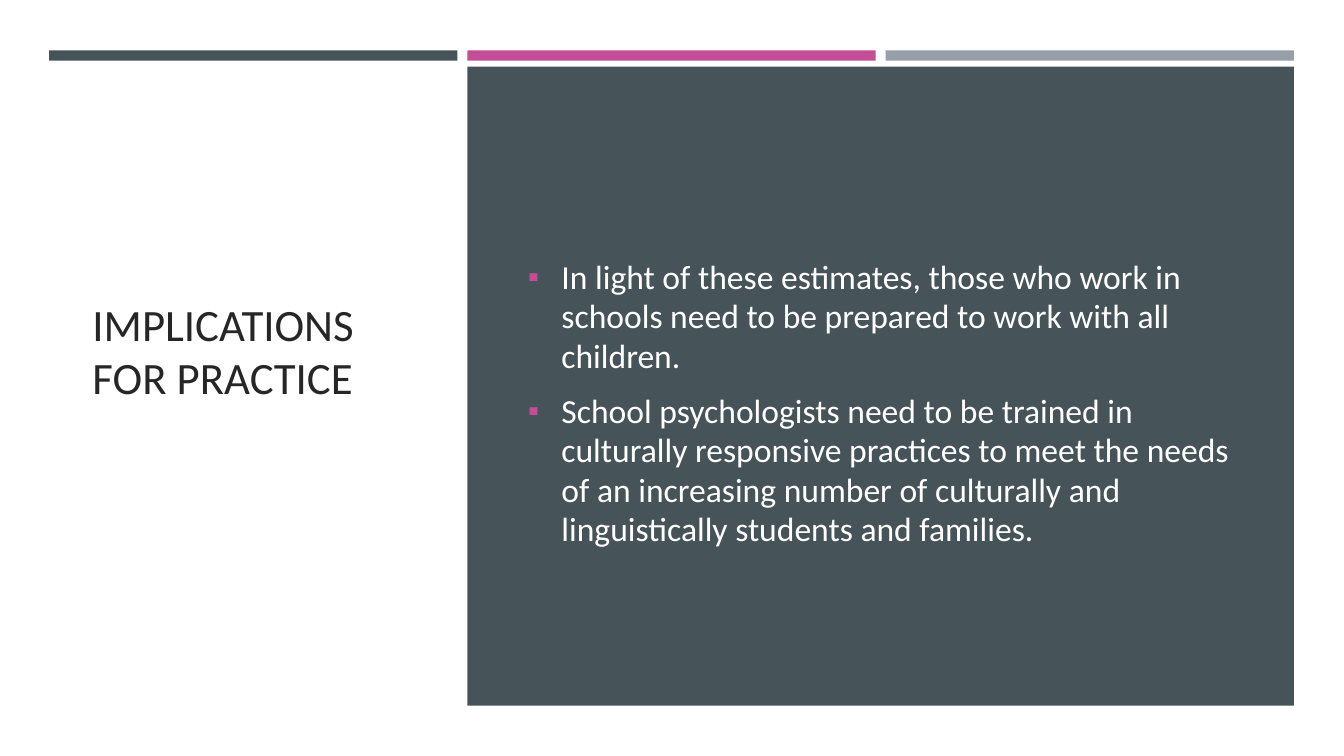
"""Build the slide on implications for practice."""
from dataclasses import dataclass

from lxml.etree import SubElement
from pptx import Presentation
from pptx.dml.color import RGBColor as Rgb
from pptx.enum.shapes import MSO_SHAPE as Shape
from pptx.enum.text import MSO_ANCHOR as Anchor
from pptx.oxml.ns import qn
from pptx.slide import Slide
from pptx.text.text import TextFrame, _Paragraph as Para
from pptx.util import Cm, Pt


@dataclass(frozen=True)
class Theme:
    """Colours and type of the slide."""
    white: str = "FFFFFF"
    slate: str = "465359"
    pink: str = "C34D97"
    grey: str = "969FA7"
    ink: str = "262626"
    font: str = "Calibri"
    head: int = 32
    body: int = 24
    lead: float = 0.98


@dataclass(frozen=True)
class Box:
    """A place on the slide in centimetres."""
    left: float
    top: float
    width: float
    height: float

    def place(self) -> tuple[Cm, Cm, Cm, Cm]:
        """Return the four lengths."""
        return Cm(self.left), Cm(self.top), Cm(self.width), Cm(self.height)


@dataclass(frozen=True)
class Block:
    """A filled rectangle."""
    box: Box
    fill: str


@dataclass(frozen=True)
class Copy:
    """A text box with its lines and type."""
    box: Box
    lines: tuple[str, ...]
    size: int
    color: str
    base: float = 0.13
    mark: bool = False


THEME = Theme()
LEFT, TOP = 1.24, 1.27
BAR, STEP, THICK = 10.29, 10.54, 0.26
INDENT = 0.84

BARS = [
    Block(Box(LEFT + i * STEP, TOP, BAR, THICK), fill)
    for i, fill in enumerate((THEME.slate, THEME.pink, THEME.grey))
]
PANEL = Block(Box(LEFT + STEP, 1.68, STEP + BAR, 16.1), THEME.slate)
TITLE = Copy(Box(2.08, 2.97, 8.48, 13.08), ("IMPLICATIONS FOR PRACTICE",),
             THEME.head, THEME.ink, base=1.4)
POINTS = Copy(
    Box(13.06, 2.97, 18.34, 14.4),
    (
        "In light of these estimates, those who work in schools need to be "
        "prepared to work with all children.",
        "School psychologists need to be trained in culturally responsive "
        "practices to meet the needs of an increasing number of culturally "
        "and linguistically students and families.",
    ),
    THEME.body, THEME.white, mark=True)


def draw(slide: Slide, block: Block) -> None:
    """Draw a plain rectangle."""
    rect = slide.shapes.add_shape(Shape.RECTANGLE, *block.box.place())
    rect.shadow.inherit = False
    rect.fill.solid()
    rect.fill.fore_color.rgb = Rgb.from_string(block.fill)
    rect.line.fill.background()


def bullet(para: Para) -> None:
    """Give a paragraph a hanging square bullet."""
    props = para._p.get_or_add_pPr()
    props.set("marL", str(Cm(INDENT)))
    props.set("indent", str(-Cm(INDENT)))
    tint = SubElement(props, qn("a:buClr"))
    SubElement(tint, qn("a:srgbClr"), val=THEME.pink)
    SubElement(props, qn("a:buSzPct"), val="92000")
    SubElement(props, qn("a:buFont"), typeface=THEME.font)
    SubElement(props, qn("a:buChar"), char="▪")


def style(frame: TextFrame, copy: Copy) -> None:
    """Format each paragraph of a frame."""
    for i, para in enumerate(frame.paragraphs):
        if copy.mark:
            bullet(para)
            para.space_after = Pt(6)
        para.space_before = Pt(5 if i else 0)
        para.line_spacing = THEME.lead
        for run in para.runs:
            run.font.name = THEME.font
            run.font.size = Pt(copy.size)
            run.font.color.rgb = Rgb.from_string(copy.color)


def write(slide: Slide, copy: Copy) -> None:
    """Write a text box centred on its height."""
    frame = slide.shapes.add_textbox(*copy.box.place()).text_frame
    frame.word_wrap = True
    frame.vertical_anchor = Anchor.MIDDLE
    frame.margin_bottom = Cm(copy.base)
    frame.text = "\n".join(copy.lines)
    style(frame, copy)


def main() -> None:
    """Build and save the deck."""
    deck = Presentation()
    deck.slide_width, deck.slide_height = Cm(33.87), Cm(19.05)
    slide = deck.slides.add_slide(deck.slide_layouts[6])
    slide.background.fill.solid()
    slide.background.fill.fore_color.rgb = Rgb.from_string(THEME.white)
    for block in (*BARS, PANEL):
        draw(slide, block)
    for copy in (TITLE, POINTS):
        write(slide, copy)
    deck.save("out.pptx")


if __name__ == "__main__":
    main()
